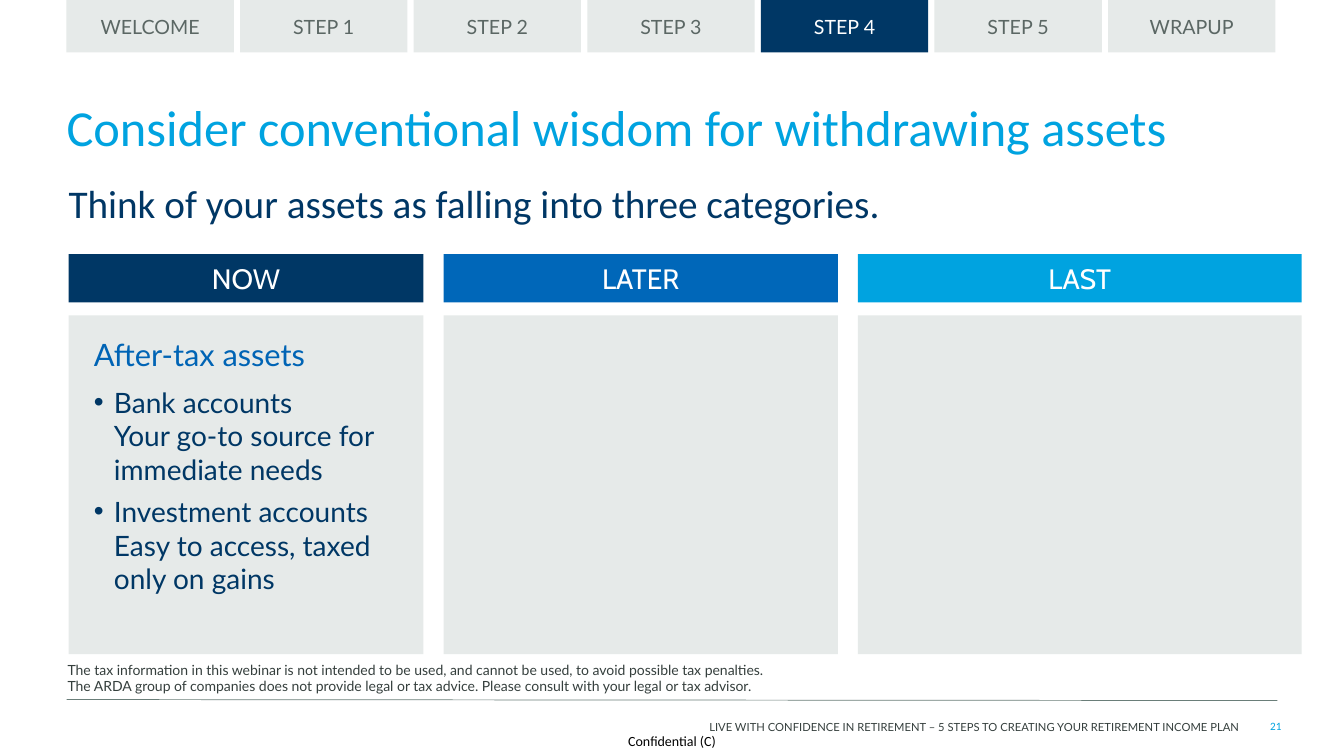
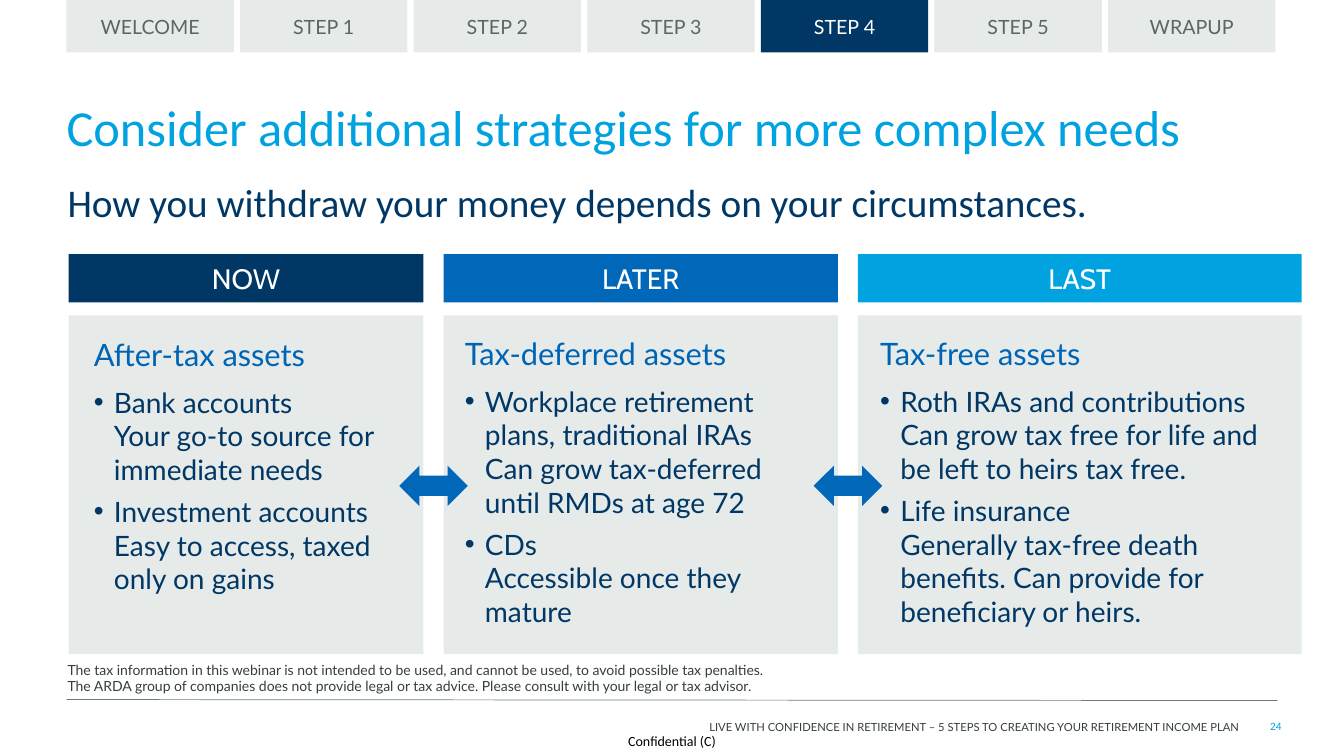
from lxml.etree import SubElement
from pptx import Presentation
from pptx.dml.color import RGBColor
from pptx.enum.shapes import MSO_CONNECTOR, MSO_SHAPE
from pptx.enum.text import MSO_ANCHOR, PP_ALIGN
from pptx.oxml.ns import qn
from pptx.util import Inches, Pt

# Content
TABS = ["WELCOME", "STEP 1", "STEP 2", "STEP 3", "STEP 4", "STEP 5", "WRAPUP"]
ACTIVE = "STEP 4"
FOOTER = "LIVE WITH CONFIDENCE IN RETIREMENT – 5 STEPS TO CREATING YOUR RETIREMENT INCOME PLAN"
NOTES = [
    "The tax information in this webinar is not intended to be used, and cannot be used, "
    "to avoid possible tax penalties.",
    "The ARDA group of companies does not provide legal or tax advice. "
    "Please consult with your legal or tax advisor.",
]
# "\v" breaks a line inside a bullet; "text" is left, top, width
COLUMNS = [
    {"name": "NOW", "color": "navy", "width": 3.52, "text": (0.93, 3.28, 3.38),
     "head": "After-tax assets",
     "items": ["Bank accounts\vYour go-to source for immediate needs",
               "Investment accounts\vEasy to access, taxed\vonly on gains"]},
    {"name": "LATER", "color": "blue", "width": 3.91, "text": (4.61, 3.27, 3.62),
     "head": "Tax-deferred assets",
     "items": ["Workplace retirement plans, traditional IRAs\vCan grow tax-deferred\v"
               "until RMDs at age 72",
               "CDs\vAccessible once they mature"]},
    {"name": "LAST", "color": "sky", "width": 4.4, "text": (8.73, 3.27, 4.08),
     "head": "Tax-free assets",
     "items": ["Roth IRAs and contributions\vCan grow tax free for life and be left "
               "to heirs tax free.",
               "Life insurance\vGenerally tax-free death benefits. Can provide for "
               "beneficiary or heirs."]},
]
SLIDES = [
    {"number": 21, "title": "Consider conventional wisdom for withdrawing assets",
     "lead": "Think of your assets as falling into three categories.",
     "lead_at": (0.68, 1.78), "filled": 1, "arrows": False},
    {"number": 24, "title": "Consider additional strategies for more complex needs",
     "lead": "How you withdraw your money depends on your circumstances.",
     "lead_at": (0.67, 1.77), "filled": 3, "arrows": True},
]

# Shared style
COLORS = {"navy": "003765", "blue": "0067B9", "sky": "00A3E0", "head": "0064B5",
          "panel": "E6EAE9", "tab": "5B6764", "ink": "353F3D", "rule": "6A7E79",
          "white": "FFFFFF", "black": "000000"}
LEFT, WIDTH = 0.66, 11.99
TAB_W, TAB_H = 1.66, 0.52
COL_X, GAP = 0.68, 0.2
HEAD_Y, HEAD_H = 2.52, 0.48
BODY_Y, BODY_H = 3.13, 3.36
ARROW_W, ARROW_H, ARROW_Y = 0.68, 0.4, 4.62


def rgb(name):
    return RGBColor.from_string(COLORS[name])


def add_bullet(para):
    props = para._p.get_or_add_pPr()
    props.set("marL", str(Inches(0.2)))
    props.set("indent", str(-Inches(0.2)))
    SubElement(props, qn("a:buFont"), typeface="Arial")
    SubElement(props, qn("a:buChar"), char="•")


def write(frame, text, first=True, size=20, font="Lato", color="ink",
          align=PP_ALIGN.LEFT, before=0, after=0, line=None, bullet=False):
    """Put one formatted paragraph into a text frame."""
    para = frame.paragraphs[0] if first else frame.add_paragraph()
    para.text = text
    if bullet:
        add_bullet(para)
    para.alignment = align
    para.space_before, para.space_after = Pt(before), Pt(after)
    if line:
        para.line_spacing = line
    for run in para.runs:
        run.font.size, run.font.name = Pt(size), font
        run.font.color.rgb = rgb(color)


def set_frame(frame, anchor, insets):
    frame.word_wrap = True
    frame.vertical_anchor = anchor
    (frame.margin_left, frame.margin_top,
     frame.margin_right, frame.margin_bottom) = [Inches(n) for n in insets]
    return frame


def add_box(slide, x, y, w, h, anchor=MSO_ANCHOR.TOP, insets=(0, 0, 0, 0)):
    box = slide.shapes.add_textbox(Inches(x), Inches(y), Inches(w), Inches(h))
    return set_frame(box.text_frame, anchor, insets)


def add_block(slide, x, y, w, h, fill, kind=MSO_SHAPE.RECTANGLE):
    block = slide.shapes.add_shape(kind, Inches(x), Inches(y), Inches(w), Inches(h))
    block.shadow.inherit = False
    block.fill.solid()
    block.fill.fore_color.rgb = rgb(fill)
    block.line.fill.background()
    return set_frame(block.text_frame, MSO_ANCHOR.MIDDLE, (0, 0, 0, 0))


def add_tabs(slide):
    step = (WIDTH - TAB_W) / (len(TABS) - 1)
    for i, name in enumerate(TABS):
        fill, ink = ("navy", "white") if name == ACTIVE else ("panel", "tab")
        frame = add_block(slide, LEFT + i * step, 0, TAB_W, TAB_H, fill)
        write(frame, name, size=14, color=ink, align=PP_ALIGN.CENTER)


def add_footer(slide, number):
    frame = add_box(slide, 0.67, 6.51, WIDTH, 0.44, insets=(0, 0.05, 0.1, 0.05))
    for i, note in enumerate(NOTES):
        write(frame, note, first=i == 0, size=10)
    rule = slide.shapes.add_connector(MSO_CONNECTOR.STRAIGHT, Inches(LEFT), Inches(6.94),
                                      Inches(12.67), Inches(6.95))
    rule.line.color.rgb, rule.line.width = rgb("rule"), Pt(0.5)
    SubElement(rule._element.spPr, qn("a:effectLst"))
    write(add_box(slide, 5.92, 7.05, 6.38, 0.23, MSO_ANCHOR.BOTTOM), FOOTER,
          size=8, align=PP_ALIGN.RIGHT)
    write(add_box(slide, 12.4, 7.11, 0.31, 0.16, MSO_ANCHOR.BOTTOM), str(number),
          size=8, font="Calibri", color="sky", align=PP_ALIGN.RIGHT)
    write(add_box(slide, 6.07, 7.21, 1.19, 0.29, MSO_ANCHOR.MIDDLE), "Confidential (C)",
          size=10, font="Calibri", color="black", align=PP_ALIGN.CENTER)


def add_columns(slide, filled, arrows):
    x = COL_X
    gaps = []
    for i, col in enumerate(COLUMNS):
        head = add_block(slide, x, HEAD_Y, col["width"], HEAD_H, col["color"])
        write(head, col["name"], font="Cabin", color="white", align=PP_ALIGN.CENTER)
        add_block(slide, x, BODY_Y, col["width"], BODY_H, "panel")
        if i < filled:
            frame = add_box(slide, *col["text"], 3.2)
            write(frame, col["head"], size=22, color="head", after=6, line=1.14)
            for item in col["items"]:
                write(frame, item, first=False, color="navy", before=3, after=3,
                      bullet=True)
        x += col["width"] + GAP
        gaps.append(x - GAP / 2)
    # Arrows centred on the gaps between columns
    if arrows:
        for mid in gaps[:-1]:
            add_block(slide, mid - ARROW_W / 2, ARROW_Y, ARROW_W, ARROW_H, "blue",
                      MSO_SHAPE.LEFT_RIGHT_ARROW)


def main():
    deck = Presentation()
    deck.slide_width, deck.slide_height = Inches(13.33), Inches(7.5)
    for page in SLIDES:
        slide = deck.slides.add_slide(deck.slide_layouts[6])
        add_tabs(slide)
        write(add_box(slide, LEFT, 1.14, WIDTH, 0.53), page["title"], size=36,
              font="Calibri", color="sky", line=Pt(30))
        write(add_box(slide, *page["lead_at"], WIDTH, 0.53), page["lead"], size=28,
              font="Calibri", color="navy", after=3)
        add_columns(slide, page["filled"], page["arrows"])
        add_footer(slide, page["number"])
    deck.save("out.pptx")


if __name__ == "__main__":
    main()
